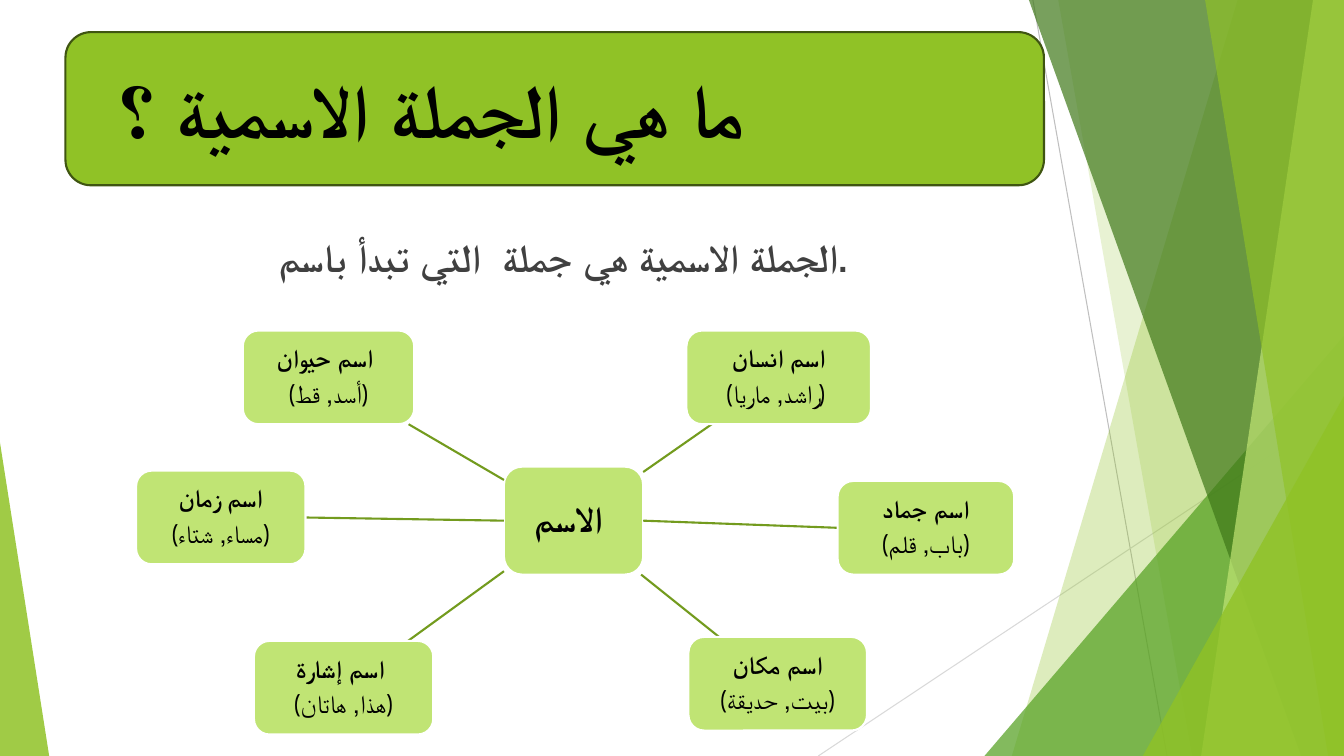
from lxml import etree
from pptx import Presentation
from pptx import util as u
from pptx.dml.color import RGBColor
from pptx.enum import shapes, text
from pptx.oxml import ns

LEAF = RGBColor(0x90, 0xC2, 0x26)
GRASS = RGBColor(0x54, 0xA0, 0x21)
FOREST = RGBColor(0x3F, 0x78, 0x19)
LIME = RGBColor(0xC0, 0xE4, 0x74)
OLIVE = RGBColor(0x3F, 0x55, 0x11)
STEM = RGBColor(0x73, 0x9B, 0x1E)
GREY = RGBColor(0xBF, 0xBF, 0xBF)
PALE_GREY = RGBColor(0xD9, 0xD9, 0xD9)
CHARCOAL = RGBColor(0x40, 0x40, 0x40)
BLACK = RGBColor(0, 0, 0)
WHITE = RGBColor(0xFF, 0xFF, 0xFF)
FONT = "Cabin"
NODE_HEIGHT = 2.36

FACETS = [
    (10.57, 4.88, LEAF, 30),
    (6.05, 9.42, LEAF, 20),
    (4.19, 8.46, GRASS, 72),
    (5.31, 12.17, FOREST, 70),
    (12.47, 9.65, LIME, 70),
    (9.75, 12.85, LEAF, 65),
    (8.18, 9.98, LEAF, 80),
]
TRIANGULAR = (2, 6)

NOUN_KINDS = [
    (2.69, 0, 4.32, "اسم حيوان ", "(أسد, قط)"),
    (13.87, 0, 4.65, "اسم انسان", "(راشد, ماريا) "),
    (17.68, 3.79, 4.45, "اسم جماد", "(باب, قلم)"),
    (13.92, 7.72, 4.5, "اسم مكان", " (بيت, حديقة) "),
    (2.97, 7.82, 4.52, "اسم إشارة ", "(هذا, هاتان)"),
    (0, 3.53, 4.27, "اسم زمان", "(مساء, شتاء)"),
]


def paint(shape, color, opacity=100, outline=None):
    shape.shadow.inherit = False
    shape.fill.solid()
    shape.fill.fore_color.rgb = color
    if opacity < 100:
        tint = shape._element.spPr.find(ns.qn("a:solidFill"))[0]
        etree.SubElement(tint, ns.qn("a:alpha"), val=str(opacity * 1000))
    if outline is None:
        shape.line.fill.background()
    else:
        shape.line.color.rgb = outline
        shape.line.width = u.Pt(1.5)


def add_box(slide, kind, box, color, opacity=100, outline=None):
    shape = slide.shapes.add_shape(kind, *map(u.Cm, box))
    paint(shape, color, opacity, outline)
    return shape


def add_line(slide, start, end, color, width):
    line = slide.shapes.add_connector(
        shapes.MSO_CONNECTOR.STRAIGHT, *map(u.Cm, (*start, *end)))
    line.line.color.rgb = color
    line.line.width = u.Pt(width)
    etree.SubElement(line._element.spPr, ns.qn("a:effectLst"))
    return line


def write(paragraph, words, size, color, bold=True):
    run = paragraph.add_run()
    run.text = words
    run.font.name = FONT
    run.font.size = u.Pt(size)
    run.font.bold = bold
    run.font.color.rgb = color


def add_triangle(slide, box, apex, color, opacity):
    triangle = add_box(slide, shapes.MSO_SHAPE.ISOSCELES_TRIANGLE, box, color, opacity)
    triangle.adjustments[0] = apex


def draw_facets(slide, left, top, width, height):
    right, bottom = left + width, top + height
    add_line(slide, (left + 5.41, top), (left + 8.79, bottom), GREY, 0.75)
    add_line(slide, (right, top + 10.24), (left, bottom), PALE_GREY, 0.75)
    for index, (first, second, color, opacity) in enumerate(FACETS):
        if index in TRIANGULAR:
            box = (left + first, top + second, width - first, height - second)
            add_triangle(slide, box, 1, color, opacity)
            continue
        corners = [(right, top), (right, bottom), (left + second, bottom)]
        outline = slide.shapes.build_freeform(u.Cm(left + first), u.Cm(top))
        outline.add_line_segments([(u.Cm(x), u.Cm(y)) for x, y in corners])
        paint(outline.convert_to_shape(), color, opacity)


def place(slide, holder, left, top, width, height, anchor):
    slide.shapes._spTree.append(holder._element)
    holder.left, holder.top = u.Cm(left), u.Cm(top)
    holder.width, holder.height = u.Cm(width), u.Cm(height)
    frame = holder.text_frame
    frame.word_wrap = True
    frame.auto_size = text.MSO_AUTO_SIZE.NONE
    frame.vertical_anchor = anchor
    return frame.paragraphs[0]


def draw_heading(slide, left, top, width, height):
    add_box(slide, shapes.MSO_SHAPE.ROUNDED_RECTANGLE,
            (left, top, width, height), LEAF, outline=OLIVE)
    question = place(slide, slide.shapes.title, left + 1.07, top + 0.61,
                     width - 2.13, height - 1.22, text.MSO_ANCHOR.MIDDLE)
    question.alignment = text.PP_ALIGN.LEFT
    write(question, "ما هي الجملة الاسمية ؟", 54, BLACK)


def draw_definition(slide, left, top, width, height):
    definition = place(slide, slide.placeholders[1], left, top, width, height,
                       text.MSO_ANCHOR.TOP)
    definition.alignment = text.PP_ALIGN.CENTER
    definition.space_before = u.Pt(10)
    layout = definition._p.get_or_add_pPr()
    layout.set("marL", "0")
    layout.set("indent", "0")
    etree.SubElement(layout, ns.qn("a:buNone"))
    write(definition, "الجملة الاسمية هي جملة  التي تبدأ باسم.", 28, CHARCOAL)


def add_node(slide, box, lines, size, inset):
    node = add_box(slide, shapes.MSO_SHAPE.ROUNDED_RECTANGLE, box, LIME, outline=WHITE)
    frame = node.text_frame
    frame.word_wrap = True
    frame.vertical_anchor = text.MSO_ANCHOR.MIDDLE
    frame.margin_left = frame.margin_right = u.Cm(inset)
    frame.margin_top = frame.margin_bottom = u.Cm(inset)
    for index, words in enumerate(lines):
        paragraph = frame.add_paragraph() if index else frame.paragraphs[0]
        paragraph.alignment = text.PP_ALIGN.CENTER
        paragraph.line_spacing = 0.9
        paragraph.space_after = u.Pt(round(size * 0.35))
        write(paragraph, words, size, BLACK, bold=index == 0)
    return node


def center(box):
    left, top, width, height = box
    return left + width / 2, top + height / 2


def edge_toward(box, target):
    x, y = center(box)
    dx, dy = target[0] - x, target[1] - y
    reach = min(box[2] / 2 / abs(dx), box[3] / 2 / abs(dy))
    return x + dx * reach, y + dy * reach


def draw_noun_map(slide, left, top):
    hub_box = (left + 9.27, top + 3.43, 3.51, 2.72)
    hub = add_node(slide, hub_box, ["الاسم "], 26, 0.18)
    for x, y, width, kind, examples in NOUN_KINDS:
        box = (left + x, top + y, width, NODE_HEIGHT)
        stem = add_line(slide, edge_toward(hub_box, center(box)),
                        edge_toward(box, center(hub_box)), STEM, 1.5)
        node = add_node(slide, box, [kind, examples], 18, 0.13)
        if abs(center(box)[1] - center(hub_box)[1]) < 0.5:
            on_right = box[0] > hub_box[0]
            stem.begin_connect(hub, 3 if on_right else 1)
            stem.end_connect(node, 1 if on_right else 3)


def main():
    deck = Presentation()
    deck.slide_width, deck.slide_height = u.Cm(33.87), u.Cm(19.05)
    slide = deck.slides.add_slide(deck.slide_layouts[1])
    draw_facets(slide, 20.62, 0, 13.25, 19.05)
    add_triangle(slide, (0, 11.15, 1.24, 7.9), 0, LEAF, 85)
    draw_heading(slide, 1.65, 0.81, 24.66, 3.86)
    draw_definition(slide, 3.61, 5.74, 21.16, 2.69)
    draw_noun_map(slide, 3.43, 8.33)
    deck.save("out.pptx")


if __name__ == "__main__":
    main()
